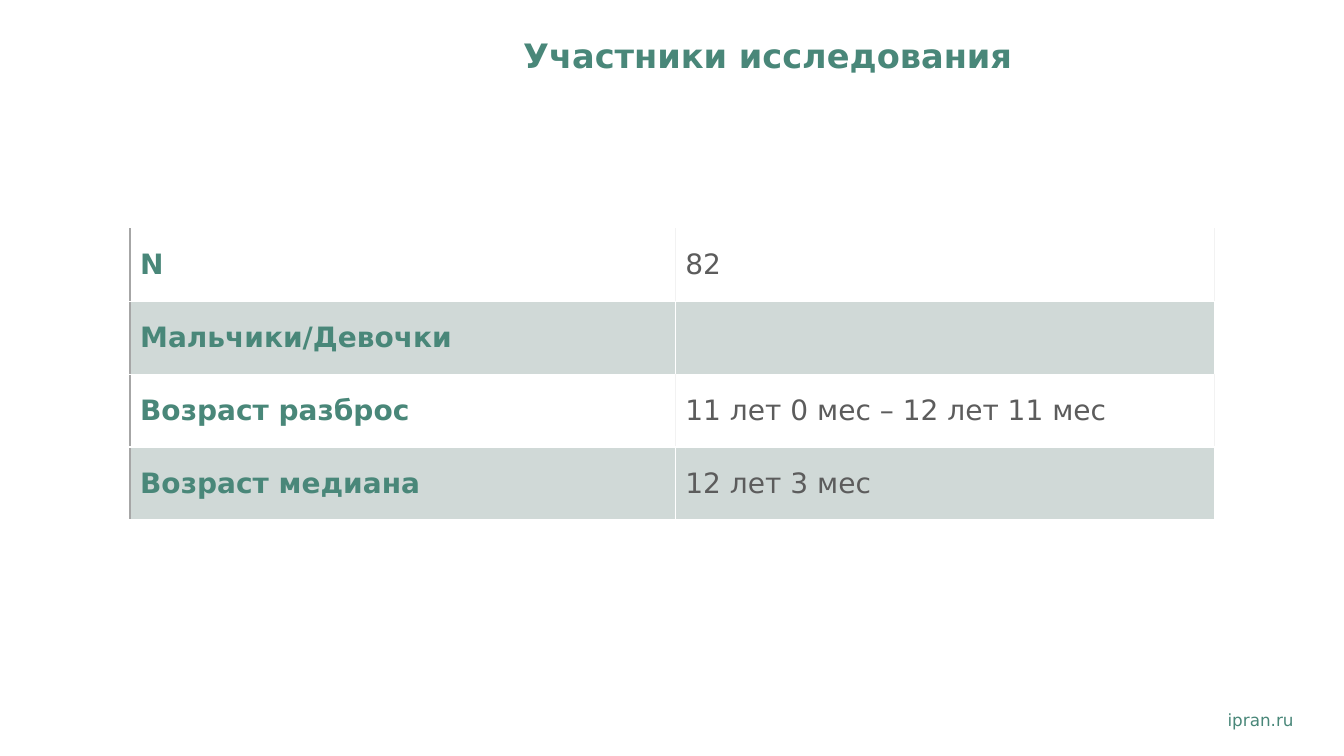
from lxml import etree
from pptx import Presentation
from pptx.dml.color import RGBColor
from pptx.enum import text
from pptx.oxml import ns
from pptx.util import Pt

TITLE = "Участники исследования"
SITE = "ipran.ru"
PARTICIPANTS = [
    ("N", "82"),
    ("Мальчики/Девочки", ""),
    ("Возраст разброс", "11 лет 0 мес – 12 лет 11 мес"),
    ("Возраст медиана", "12 лет 3 мес"),
]

FONT = "DejaVu Sans"
GREEN = RGBColor(0x49, 0x87, 0x79)
GREY = RGBColor(0x5C, 0x5C, 0x5C)
WHITE = RGBColor(0xFF, 0xFF, 0xFF)
BAND = RGBColor(0xD0, 0xD9, 0xD7)
EDGE = RGBColor(0xA6, 0xA6, 0xA6)
PALE = RGBColor(0xF2, 0xF2, 0xF2)

TABLE_LEFT, TABLE_TOP = 92.9, 163.4
COLUMN_WIDTHS = (389.5, 385.2)
ROW_HEIGHT = 52


def write(tf, content, size, color, bold=False):
    tf.text = content
    p = tf.paragraphs[0]
    p.alignment = text.PP_ALIGN.LEFT
    for r in p.runs:
        r.font.name = FONT
        r.font.size = Pt(size)
        r.font.bold = bold
        r.font.color.rgb = color
    return p


def add_borders(cell, left, side):
    tc_pr = cell._tc.get_or_add_tcPr()
    for tag, color in (("lnL", left), ("lnR", side), ("lnT", WHITE), ("lnB", WHITE)):
        ln = etree.SubElement(tc_pr, ns.qn(f"a:{tag}"), w=str(Pt(1)))
        fill = etree.SubElement(ln, ns.qn("a:solidFill"))
        etree.SubElement(fill, ns.qn("a:srgbClr"), val=str(color))


def add_title(s):
    title = s.shapes.title
    title.left, title.top, title.width, title.height = Pt(366.5), Pt(24.5), Pt(529.2), Pt(40.3)
    tf = title.text_frame
    tf.word_wrap = True
    tf.auto_size = text.MSO_AUTO_SIZE.NONE
    tf.vertical_anchor = text.MSO_ANCHOR.TOP
    write(tf, TITLE, 24, GREEN, True).line_spacing = 0.9


def add_participants(s):
    frame = s.shapes.add_table(
        len(PARTICIPANTS), len(COLUMN_WIDTHS), Pt(TABLE_LEFT), Pt(TABLE_TOP),
        Pt(sum(COLUMN_WIDTHS)), Pt(ROW_HEIGHT * len(PARTICIPANTS)))
    table = frame.table
    table.first_row = False
    table.horz_banding = False
    for column, width in zip(table.columns, COLUMN_WIDTHS):
        column.width = Pt(width)
    for i, values in enumerate(PARTICIPANTS):
        table.rows[i].height = Pt(ROW_HEIGHT)
        fill, side = (BAND, WHITE) if i % 2 else (WHITE, PALE)
        for j, value in enumerate(values):
            cell = table.cell(i, j)
            is_label = j == 0
            cell.vertical_anchor = text.MSO_ANCHOR.MIDDLE
            add_borders(cell, EDGE if is_label else side, side)
            cell.fill.solid()
            cell.fill.fore_color.rgb = fill
            write(cell.text_frame, value, 20, GREEN if is_label else GREY, is_label)


def add_site(s):
    tf = s.shapes.add_textbox(Pt(869.8), Pt(503.3), Pt(74.9), Pt(21.6)).text_frame
    tf.word_wrap = True
    write(tf, SITE, 12, GREEN)


def main():
    prs = Presentation()
    prs.slide_width, prs.slide_height = Pt(960), Pt(540)
    s = prs.slides.add_slide(prs.slide_layouts[5])
    add_site(s)
    add_participants(s)
    add_title(s)
    prs.save("out.pptx")


if __name__ == "__main__":
    main()
